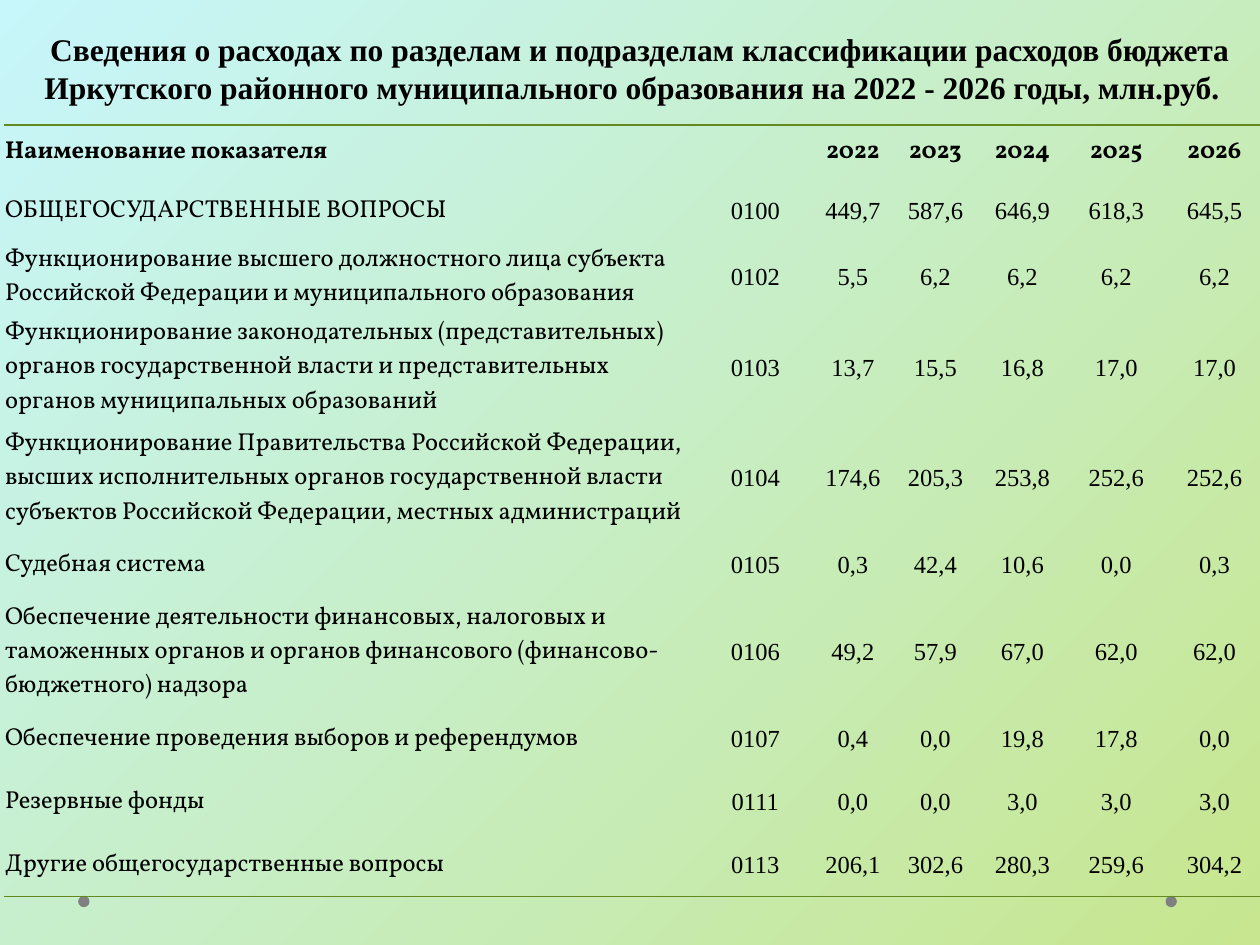
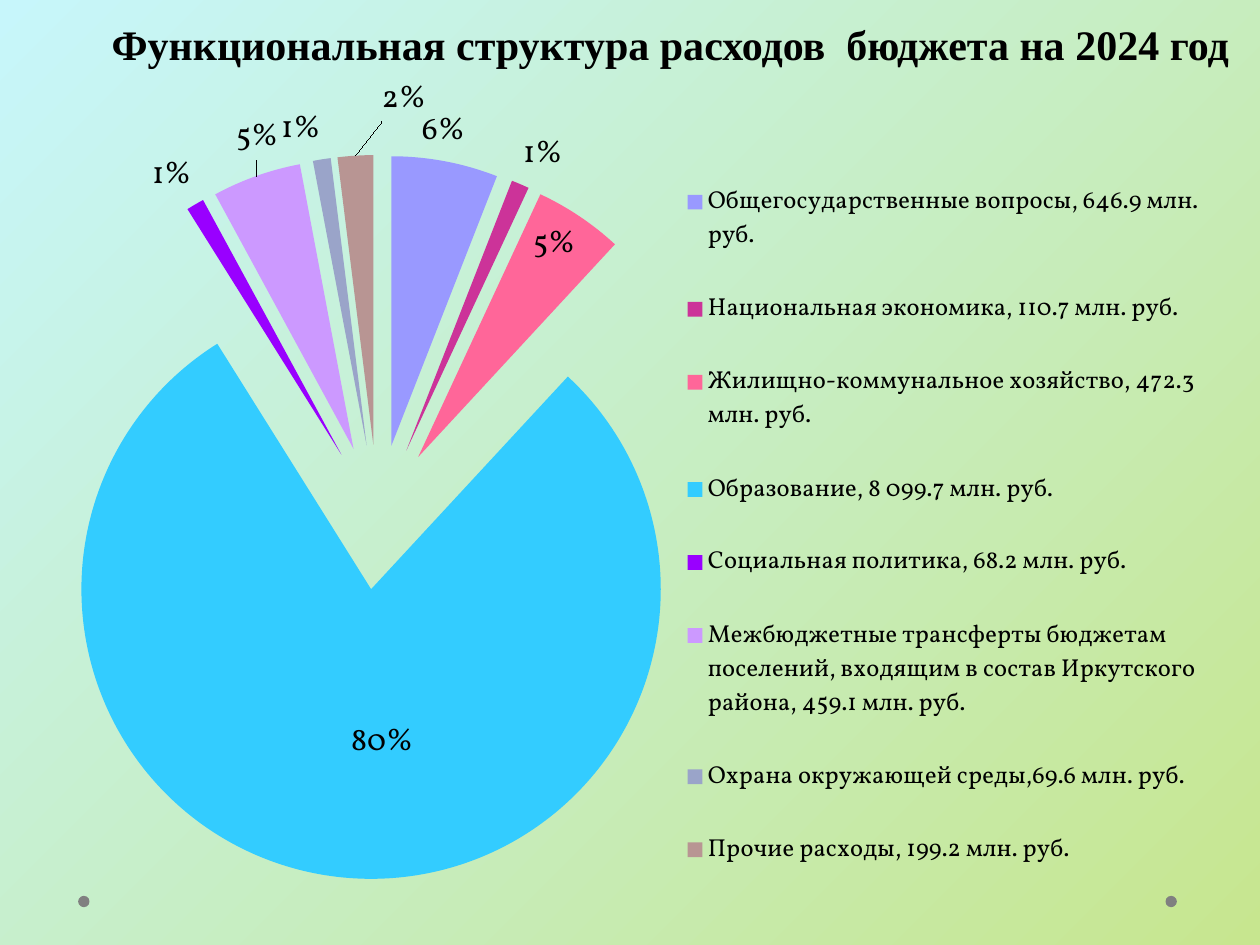
import pptx
import pptx.chart.data
import pptx.dml.color
import pptx.enum.chart
import pptx.enum.shapes
import pptx.enum.text
import pptx.oxml
import pptx.oxml.ns
import pptx.util

# The slide is a grid of 100 columns by 75 rows
CELL = pptx.util.Inches(0.1)
COLS, ROWS = 100, 75

SERIF, BODY = "Times New Roman", "Vollkorn"
BLACK, GREY, GREEN = "000000", "808080", "63891F"
BACKGROUND = ("C7F6FB", "C7E68F")

COLUMN_WIDTHS = (55.2, 8.9, 6.6, 6.5, 7.3, 7.6, 8)
TALL, NORMAL = 8.8, 5
ROW_HEIGHTS = (4.3, NORMAL, 5.3, TALL, TALL, NORMAL, TALL, NORMAL, NORMAL, NORMAL)
EXPENSES = (
    ("Наименование показателя", "", "2022", "2023", "2024", "2025", "2026"),
    ("ОБЩЕГОСУДАРСТВЕННЫЕ ВОПРОСЫ",
     "0100", "449,7", "587,6", "646,9", "618,3", "645,5"),
    ("Функционирование высшего должностного лица субъекта Российской Федерации "
     "и муниципального образования",
     "0102", "5,5", "6,2", "6,2", "6,2", "6,2"),
    ("Функционирование законодательных (представительных) органов государственной "
     "власти и представительных органов муниципальных образований",
     "0103", "13,7", "15,5", "16,8", "17,0", "17,0"),
    ("Функционирование Правительства Российской Федерации, высших исполнительных "
     "органов государственной власти субъектов Российской Федерации, местных администраций",
     "0104", "174,6", "205,3", "253,8", "252,6", "252,6"),
    ("Судебная система", "0105", "0,3", "42,4", "10,6", "0,0", "0,3"),
    ("Обеспечение деятельности финансовых, налоговых и таможенных органов и органов "
     "финансового (финансово-бюджетного) надзора",
     "0106", "49,2", "57,9", "67,0", "62,0", "62,0"),
    ("Обеспечение проведения выборов и референдумов",
     "0107", "0,4", "0,0", "19,8", "17,8", "0,0"),
    ("Резервные фонды", "0111", "0,0", "0,0", "3,0", "3,0", "3,0"),
    ("Другие общегосударственные вопросы",
     "0113", "206,1", "302,6", "280,3", "259,6", "304,2"),
)

# Sector caption, share in percent, colour
SECTORS = (
    ("Общегосударственные вопросы, 646.9 млн. руб.", 6, "9999FF"),
    ("Национальная экономика, 110.7 млн. руб.", 1, "CC3399"),
    ("Жилищно-коммунальное хозяйство, 472.3 млн. руб.", 5, "FF6699"),
    ("Образование, 8 099.7 млн. руб.", 80, "33CCFF"),
    ("Социальная политика, 68.2 млн. руб.", 1, "9900FF"),
    ("Межбюджетные трансферты бюджетам поселений, входящим в состав "
     "Иркутского района, 459.1 млн. руб.", 5, "CC99FF"),
    ("Охрана окружающей среды,69.6 млн. руб.", 1, "9AA4C9"),
    ("Прочие расходы, 199.2 млн. руб.", 2, "B89593"),
)
GENERAL, HOUSING, EDUCATION, TRANSFERS, OTHER = 0, 2, 3, 5, 7
# Label shifts in shares of the chart
LABEL_SHIFTS = {GENERAL: (-0.02, 0), EDUCATION: (0.02, 0.01),
                TRANSFERS: (0.02, -0.01), OTHER: (0.04, -0.03)}


def rgb(value):
    return pptx.dml.color.RGBColor.from_string(value)


def cells(n):
    return int(n * CELL)


def style(font, name, size, bold=False):
    font.name, font.size, font.bold = name, pptx.util.Pt(size), bold
    font.color.rgb = rgb(BLACK)


def xml(text):
    """Parse a fragment, declaring its namespaces on the root."""
    tag = text[1:].split(">")[0].split("/")[0].split(" ")[0]
    return pptx.oxml.parse_xml(
        text.replace(tag, f'{tag} {pptx.oxml.ns.nsdecls("a", "c")}', 1))


def dress_master(prs, slide):
    """Background gradient and the two dots at the foot."""
    master = prs.slide_master
    fill = master.background.fill
    fill.gradient()
    fill.gradient_angle = 315
    for stop, color in zip(fill.gradient_stops, BACKGROUND):
        stop.color.rgb = rgb(color)
    for i, left in enumerate((6.2, 92.5)):
        sp = slide.shapes.add_shape(pptx.enum.shapes.MSO_SHAPE.OVAL, cells(left),
                                    cells(71.1), cells(0.9), cells(0.9))
        sp.shadow.inherit = False
        sp.fill.solid()
        sp.fill.fore_color.rgb = rgb(GREY)
        sp.line.fill.background()
        # Move the dot to the master, behind its placeholders
        sp.element.nvSpPr.cNvPr.set("id", str(20 + i))
        master.shapes.element.insert(2 + i, sp.element)


def add_title(slide, box, text, size):
    sp = slide.shapes.title
    sp.left, sp.top, sp.width, sp.height = map(cells, box)
    tf = sp.text_frame
    tf.text = text
    tf.word_wrap = True
    tf.vertical_anchor = pptx.enum.text.MSO_ANCHOR.BOTTOM
    p = tf.paragraphs[0]
    p.alignment = pptx.enum.text.PP_ALIGN.CENTER
    style(p.runs[0].font, SERIF, size, bold=True)


def set_border(cell, side):
    line = xml(f'<a:{side} w="12700"><a:solidFill><a:srgbClr val="{GREEN}"/>'
               f'</a:solidFill></a:{side}>')
    cell._tc.get_or_add_tcPr().insert(0, line)


def fill_cell(cell, text, is_header, is_name):
    cell.fill.background()
    cell.margin_left = cell.margin_right = cell.margin_top = cells(0.1)
    cell.margin_bottom = 0
    cell.vertical_anchor = pptx.enum.text.MSO_ANCHOR.MIDDLE
    if not text:
        return
    cell.text_frame.text = text
    p = cell.text_frame.paragraphs[0]
    if not is_name:
        p.alignment = pptx.enum.text.PP_ALIGN.CENTER
    style(p.runs[0].font, BODY if is_header or is_name else SERIF, 14, is_header)


def add_expense_table(slide, left, top):
    frame = slide.shapes.add_table(len(EXPENSES), len(COLUMN_WIDTHS), cells(left), cells(top),
                                   cells(sum(COLUMN_WIDTHS)), cells(sum(ROW_HEIGHTS)))
    table = frame.table
    table.first_row = table.horz_banding = False
    # Plain style without a grid
    style_id = table._tbl.tblPr.find(pptx.oxml.ns.qn("a:tableStyleId"))
    style_id.text = "{2D5ABB26-0587-4C30-8999-92F81FD0307C}"
    for column, width in zip(table.columns, COLUMN_WIDTHS):
        column.width = cells(width)
    for row, height in zip(table.rows, ROW_HEIGHTS):
        row.height = cells(height)
    last = len(EXPENSES) - 1
    for i, values in enumerate(EXPENSES):
        for j, text in enumerate(values):
            cell = table.cell(i, j)
            fill_cell(cell, text, is_header=i == 0, is_name=j == 0)
            if i in (0, last):
                set_border(cell, "lnB" if i else "lnT")


def manual_layout(x, y, w=None, h=None, inner=False):
    """Chart part position in shares of the chart; without a size, an offset."""
    parts = ['<c:layoutTarget val="inner"/>'] if inner else []
    if w:
        parts += ['<c:xMode val="edge"/>', '<c:yMode val="edge"/>']
    parts += [f'<c:{k} val="{v}"/>' for k, v in zip("xywh", (x, y, w, h)) if v is not None]
    return xml(f'<c:layout><c:manualLayout>{"".join(parts)}</c:manualLayout></c:layout>')


def replace_layout(parent, index, layout):
    for old in parent.findall(pptx.oxml.ns.qn("c:layout")):
        parent.remove(old)
    parent.insert(index, layout)


def show_percent(labels):
    """Show the percentage alone in one label or a set of labels."""
    for tag, value in (("c:showVal", "0"), ("c:showPercent", "1")):
        labels.find(pptx.oxml.ns.qn(tag)).set("val", value)


def label_sectors(series):
    position = pptx.enum.chart.XL_LABEL_POSITION
    labels = series.data_labels
    labels.position = position.OUTSIDE_END
    style(labels.font, BODY, 18)
    show_percent(labels._element)
    places = {HOUSING: position.INSIDE_END, EDUCATION: position.CENTER}
    for i in sorted({*places, *LABEL_SHIFTS}):
        label = series.points[i].data_label
        if i == EDUCATION:
            # The rounded shares add up to 101, so this label is written out
            label.text_frame.text = f"{SECTORS[i][1]}%"
            style(label.text_frame.paragraphs[0].runs[0].font, BODY, 18)
        else:
            style(label.font, BODY, 18)
        label.position = places.get(i, position.OUTSIDE_END)
    for dLbl in series._element.iter(pptx.oxml.ns.qn("c:dLbl")):
        show_percent(dLbl)
        shift = LABEL_SHIFTS.get(int(dLbl[0].get("val")))
        if shift:
            replace_layout(dLbl, 1, manual_layout(*shift))


def add_expense_pie(slide, box):
    captions, shares, colors = zip(*SECTORS)
    data = pptx.chart.data.CategoryChartData()
    data.categories = captions
    data.add_series("Series 1", shares)
    chart = slide.shapes.add_chart(pptx.enum.chart.XL_CHART_TYPE.PIE,
                                   *map(cells, box), data).chart
    chart.has_title = False
    style(chart.font, BODY, 18)
    chart.plots[0].vary_by_categories = True

    # Sectors pulled apart
    series = chart.plots[0].series[0]
    tx = series._element.find(pptx.oxml.ns.qn("c:tx"))
    tx.addnext(xml('<c:explosion val="25"/>'))
    for i, color in enumerate(colors):
        fill = series.points[i].format.fill
        fill.solid()
        fill.fore_color.rgb = rgb(color)
    label_sectors(series)

    # Plot area on the left, legend on the right
    plot_area = chart.plots[0]._element.getparent()
    replace_layout(plot_area, 0, manual_layout(0, 0.09, 0.59, 0.82, inner=True))
    chart.has_legend = True
    legend = chart.legend
    legend.position = pptx.enum.chart.XL_LEGEND_POSITION.RIGHT
    legend.include_in_layout = False
    style(legend.font, BODY, 14)
    replace_layout(legend._element, 1, manual_layout(0.54, 0.08, 0.43, 0.86))


def table_slide(slide):
    add_title(slide, (1.6, 1.3, 98.4, 7.6),
              "Сведения о расходах по разделам и подразделам классификации расходов бюджета "
              "Иркутского районного муниципального образования на 2022 - 2026 годы, млн.руб.  ",
              18)
    add_expense_table(slide, 0.3, 9.9)


def chart_slide(slide):
    add_title(slide, (4.3, 0.5, 97.8, 5.5),
              "Функциональная структура расходов  бюджета на 2024 год", 24)
    add_expense_pie(slide, (1.2, 6, 97.6, 70.1))


def main():
    prs = pptx.Presentation()
    prs.slide_width, prs.slide_height = COLS * CELL, ROWS * CELL
    title_only = prs.slide_layouts[5]
    slides = [prs.slides.add_slide(title_only) for _ in range(2)]
    dress_master(prs, slides[0])
    table_slide(slides[0])
    chart_slide(slides[1])
    prs.save("out.pptx")


if __name__ == "__main__":
    main()
